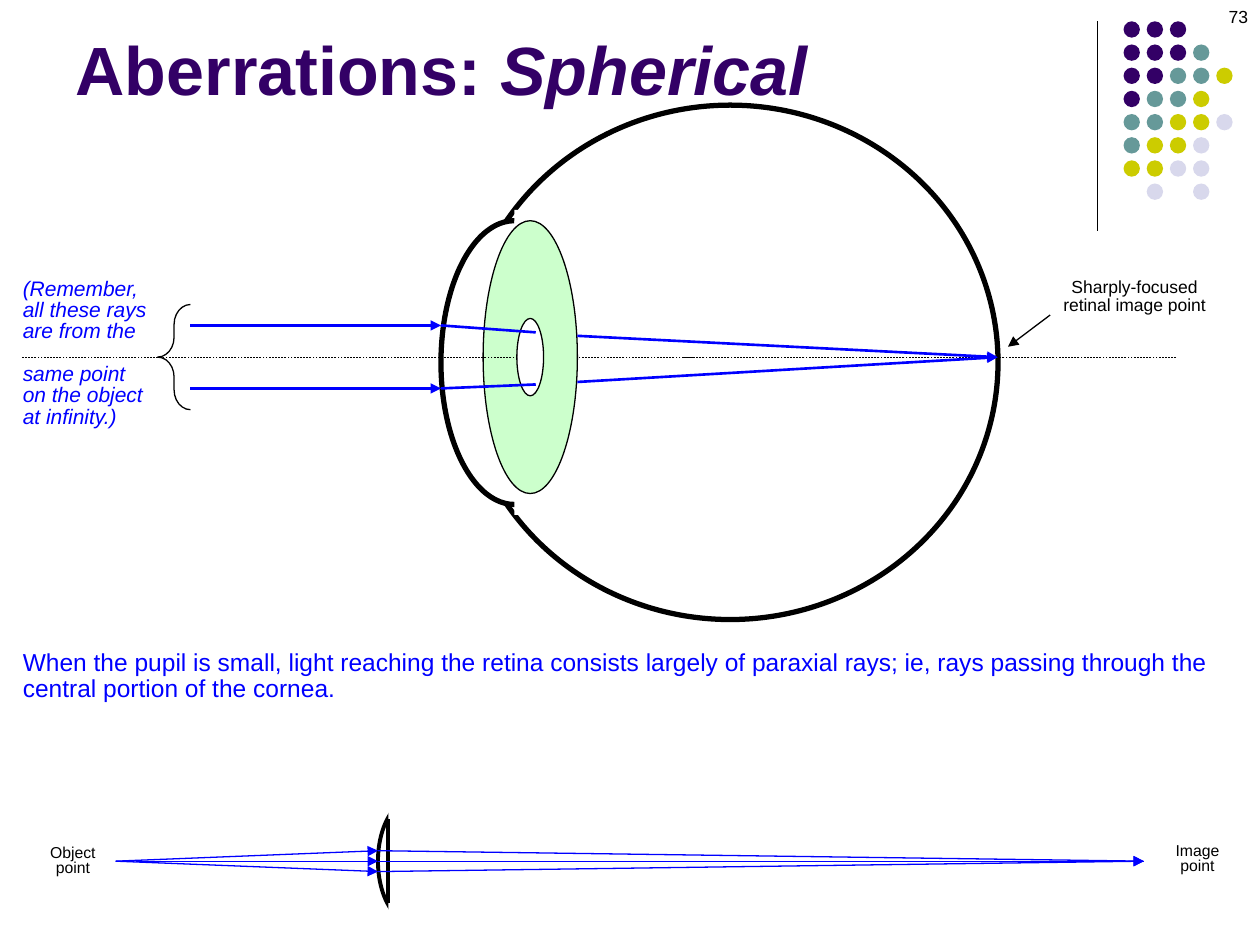
from dataclasses import dataclass

from lxml import etree
from pptx import Presentation
from pptx.dml.color import RGBColor
from pptx.enum.dml import MSO_LINE
from pptx.enum.shapes import MSO_CONNECTOR, MSO_SHAPE
from pptx.enum.text import MSO_ANCHOR, MSO_AUTO_SIZE, PP_ALIGN
from pptx.oxml.ns import qn
from pptx.util import Cm, Pt

OVAL, RECT, BRACE = MSO_SHAPE.OVAL, MSO_SHAPE.RECTANGLE, MSO_SHAPE.LEFT_BRACE
LEFT, CENTER, RIGHT = PP_ALIGN.LEFT, PP_ALIGN.CENTER, PP_ALIGN.RIGHT
STRAIGHT, DASH = MSO_CONNECTOR.STRAIGHT, MSO_LINE.DASH


@dataclass(frozen=True)
class Theme:
    font: str = "Arial"
    ink: str = "000000"
    paper: str = "FFFFFF"
    ray: str = "0000FF"
    pale_ray: str = "CCECFF"
    lens: str = "CCFFCC"
    purple: str = "330066"
    teal: str = "669999"
    olive: str = "CCCC00"
    lilac: str = "D8D8EC"
    title: int = 39
    body: int = 14
    note: int = 12
    label: int = 10
    small: int = 9


theme = Theme()
prs = Presentation()
prs.slide_width, prs.slide_height = Cm(25.4), Cm(19.05)
s = prs.slides.add_slide(prs.slide_layouts[5])


def add_line(x1, y1, x2, y2, color, width, arrow=False, dash=None):
    c = s.shapes.add_connector(STRAIGHT, Cm(x1), Cm(y1), Cm(x2), Cm(y2))
    c.line.color.rgb = RGBColor.from_string(color)
    c.line.width = Pt(width)
    if dash:
        c.line.dash_style = dash
    spPr = c._element.spPr
    if arrow:
        etree.SubElement(spPr.find(qn("a:ln")), qn("a:tailEnd"), type="triangle")
    etree.SubElement(spPr, qn("a:effectLst"))


def style(sp, fill=None, line=None, width=0.75):
    sp.shadow.inherit = False
    if fill:
        sp.fill.solid()
        sp.fill.fore_color.rgb = RGBColor.from_string(fill)
    else:
        sp.fill.background()
    if line:
        sp.line.color.rgb = RGBColor.from_string(line)
        sp.line.width = Pt(width)
    else:
        sp.line.fill.background()


title = s.shapes.title
title.left, title.top, title.width, title.height = Cm(1.27), Cm(0.42), Cm(20.96), Cm(1.91)
tf = title.text_frame
tf.auto_size = MSO_AUTO_SIZE.NONE
tf.vertical_anchor = MSO_ANCHOR.BOTTOM
p = tf.paragraphs[0]
p.alignment = LEFT
for text, italic in [("Aberrations: ", False), ("Spherical", True)]:
    r = p.add_run()
    r.text = text
    r.font.name, r.font.size = theme.font, Pt(theme.title)
    r.font.bold, r.font.italic = True, italic
    r.font.color.rgb = RGBColor.from_string(theme.purple)

add_line(22.12, 0.43, 22.12, 4.65, theme.ink, 0.75)
dot_colors = {"P": theme.purple, "T": theme.teal, "O": theme.olive, "L": theme.lilac}
dot_rows = ["PPP", "PPPT", "PPTTO", "PTTO", "TTOOL", "TOOL", "OOLL", "-L-L"]
pitch = 3.27 / 7
for row, codes in enumerate(dot_rows):
    for col, code in enumerate(codes):
        if code in dot_colors:
            dot = s.shapes.add_shape(
                OVAL, Cm(22.65 + col * pitch), Cm(0.43 + row * pitch), Cm(0.33), Cm(0.33))
            style(dot, dot_colors[code])

lens_y, spread = 17.36, 0.21
for offset in (-spread, spread, 0):
    add_line(7.62, lens_y + offset, 9.1, lens_y + offset, theme.pale_ray, 0.75, arrow=True)
for y in (16.51, 18.2):
    add_line(7.83, y, 8.89, y, theme.ray, 1.5, arrow=True)

eye_and_small_lens = [
    (OVAL, 9.32, 2.12, 10.8, 10.37, None, theme.ink, 3),
    (OVAL, 8.89, 4.45, 2.96, 5.72, theme.paper, theme.ink, 3),
    (RECT, 10.37, 4.45, 2.33, 5.93, theme.paper, None, 0),
    (RECT, 10.37, 4.23, 1.27, 0.42, theme.paper, None, 0),
    (OVAL, 7.62, 16.09, 1.48, 2.54, None, theme.ink, 2.25),
    (RECT, 7.83, 15.88, 1.9, 3.17, theme.paper, None, 0),
]
for kind, x, y, w, h, fill, line, width in eye_and_small_lens:
    style(s.shapes.add_shape(kind, Cm(x), Cm(y), Cm(w), Cm(h)), fill, line, width)

axis_x, axis_y = 10.69, 7.2
corners = []
for rx, ry in [(0.95, 2.75), (0.27, -0.78)]:
    directions = [(-1, 0), (0, -1), (1, 0), (0, 1), (-1, 0)]
    corners.append([(Cm(axis_x + rx * dx), Cm(axis_y + ry * dy)) for dx, dy in directions])
outer, pupil = corners
fb = s.shapes.build_freeform(*outer[0])
fb.add_line_segments(outer[1:], close=True)
fb.move_to(*pupil[0])
fb.add_line_segments(pupil[1:], close=True)
lens = fb.convert_to_shape()
style(lens, theme.lens, theme.ink)

kappa = 0.55
segments = list(lens._element.iter(qn("a:moveTo"), qn("a:lnTo")))
for i, segment in enumerate(segments):
    pt = segment.find(qn("a:pt"))
    x, y = int(pt.get("x")), int(pt.get("y"))
    if segment.tag == qn("a:lnTo"):
        dx, dy = x - x0, y - y0
        if i % 5 in (1, 3):
            controls = [(x0, y0 + kappa * dy), (x - kappa * dx, y)]
        else:
            controls = [(x0 + kappa * dx, y0), (x, y - kappa * dy)]
        curve = etree.Element(qn("a:cubicBezTo"))
        for cx, cy in controls + [(x, y)]:
            etree.SubElement(curve, qn("a:pt"), x=str(round(cx)), y=str(round(cy)))
        segment.getparent().replace(segment, curve)
    x0, y0 = x, y

for x1, x2 in [(10.37, 0.43), (23.71, 13.76), (13.97, 11.64)]:
    add_line(x1, axis_y, x2, axis_y, theme.ink, 0.25, dash=DASH)
for y_cornea, y_pupil, y_exit in [(6.56, 6.7, 6.77), (7.83, 7.75, 7.7)]:
    add_line(3.84, y_cornea, 8.89, y_cornea, theme.ray, 1.5, arrow=True)
    add_line(8.89, y_cornea, 10.8, y_pupil, theme.ray, 1.5)
    add_line(11.64, y_exit, 20.11, axis_y, theme.ray, 1.5, arrow=True)

add_line(7.83, 16.51, 7.83, 18.2, theme.ink, 2.25)
for x_start, offset in [(2.74, 0), (2.33, -spread), (2.33, spread)]:
    add_line(7.62, lens_y + offset, 23.06, lens_y, theme.ray, 0.75, arrow=offset != 0)
    add_line(x_start, lens_y, 7.62, lens_y + offset, theme.ray, 0.75, arrow=True)

add_line(21.17, 6.35, 20.32, 6.99, theme.ink, 0.75, arrow=True)
brace = s.shapes.add_shape(BRACE, Cm(3.18), Cm(6.14), Cm(0.66), Cm(2.12))
brace.adjustments[0] = 0.61
style(brace, line=theme.ink)

texts = [
    (0.76, 16.94, 1.42, 0.87, theme.small, theme.ink, CENTER, 0.8, ["Object", "point"]),
    (23.44, 16.89, 1.4, 0.87, theme.small, theme.ink, CENTER, 0.8, ["Image", "point"]),
    (21.18, 5.5, 3.38, 1, theme.label, theme.ink, CENTER, 0.85,
     ["Sharply-focused", "retinal image point"]),
    (0.21, 12.98, 24.51, 1.33, theme.body, theme.ray, LEFT, 0.9,
     ["When the pupil is small, light reaching the retina consists largely of paraxial rays; "
      "ie, rays passing through the", "central portion of the cornea."]),
    (19.48, 0, 5.93, 1.27, theme.label, theme.ink, RIGHT, 1, ["73"]),
    (0.21, 5.5, 3, 3.27, theme.note, theme.ray, LEFT, 0.85,
     ["(Remember,", "all these rays", "are from the",
      "same point", "on the object", "at infinity.)"]),
]
for x, y, w, h, size, color, align, spacing, lines in texts:
    tf = s.shapes.add_textbox(Cm(x), Cm(y), Cm(w), Cm(h)).text_frame
    tf.word_wrap = align == RIGHT
    tf.text = "\n".join(lines)
    for p in tf.paragraphs:
        p.alignment, p.line_spacing = align, spacing
        if p.text == "same point":
            p.space_before = Pt(12)
        for r in p.runs:
            r.font.name, r.font.size = theme.font, Pt(size)
            r.font.italic = size == theme.note
            r.font.color.rgb = RGBColor.from_string(color)

prs.save("out.pptx")
